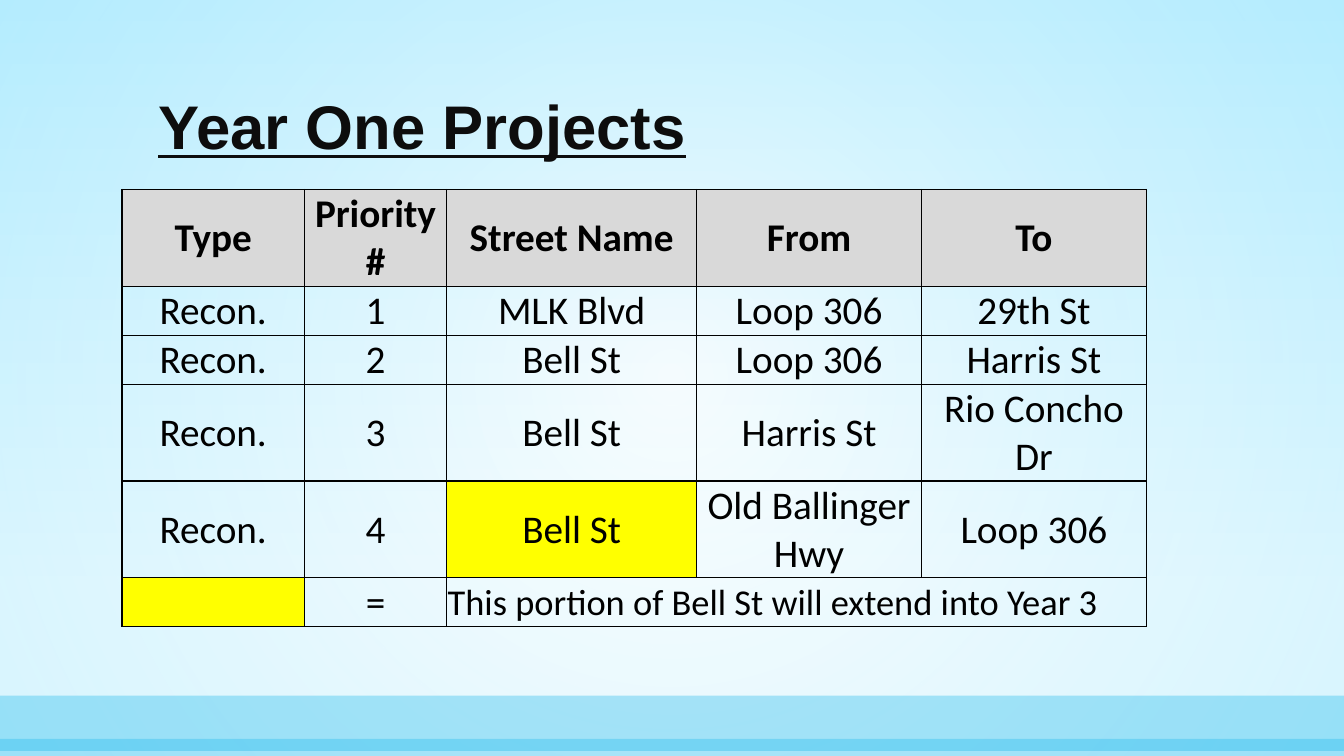
"""Build the Year One Projects slide with its street reconstruction table."""
from lxml.etree import SubElement
from pptx import Presentation
from pptx.dml.color import RGBColor
from pptx.enum.shapes import MSO_SHAPE
from pptx.enum.text import MSO_ANCHOR, PP_ALIGN
from pptx.oxml import parse_xml
from pptx.oxml.ns import nsdecls, qn
from pptx.util import Inches, Pt

COLORS = {
    "white": "FFFFFF",
    "pale": "C8F1FF",
    "sky": "91E4FF",
    "band": "00B0EA",
    "title": "0D0D0D",
    "black": "000000",
    "header": "D9D9D9",
    "highlight": "FFFF00",
}


def set_gradient(element, stops, direction):
    """Replace the first solid fill under element by a gradient."""
    stop_xml = "".join(
        f'<a:gs pos="{position * 1000}"><a:srgbClr val="{COLORS[name]}">'
        f'<a:alpha val="{alpha * 1000}"/></a:srgbClr></a:gs>'
        for position, name, alpha in stops
    )
    solid = element.find(".//" + qn("a:solidFill"))
    solid.getparent().replace(solid, parse_xml(
        f'<a:gradFill {nsdecls("a")} rotWithShape="1">'
        f"<a:gsLst>{stop_xml}</a:gsLst>{direction}</a:gradFill>"
    ))


def add_backdrop(slide, top, height, alpha):
    """Add a full-width rectangle with a translucent fill."""
    shape = slide.shapes.add_shape(
        MSO_SHAPE.RECTANGLE, 0, Inches(top), Inches(13.33), Inches(height))
    shape.shadow.inherit = False
    shape.line.fill.background()
    shape.fill.solid()
    shape.fill.fore_color.rgb = RGBColor.from_string(COLORS["band"])
    color = shape._element.spPr.find(".//" + qn("a:srgbClr"))
    SubElement(color, qn("a:alpha"), val=str(alpha * 1000))
    return shape


presentation = Presentation()
presentation.slide_width = Inches(13.33)
presentation.slide_height = Inches(7.5)
slide = presentation.slides.add_slide(presentation.slide_layouts[5])

slide.background.fill.solid()
set_gradient(slide._element, [(0, "pale", 56), (79, "white", 100)],
             '<a:lin ang="5400000" scaled="0"/>')
glow = add_backdrop(slide, 0, 7.5, 100)
set_gradient(glow._element.spPr, [(0, "white", 49), (100, "sky", 35)],
             '<a:path path="circle"><a:fillToRect l="50000" t="50000" '
             'r="50000" b="50000"/></a:path>')
add_backdrop(slide, 6.9, 0.55, 30)
add_backdrop(slide, 7.33, 0.17, 28)

title = slide.shapes.title
slide.shapes._spTree.append(title._element)
title.left, title.top = Inches(1.47), Inches(0.48)
title.width, title.height = Inches(10.4), Inches(1.19)
title.text_frame.text = "Year One Projects"
title.text_frame.vertical_anchor = MSO_ANCHOR.BOTTOM
paragraph = title.text_frame.paragraphs[0]
paragraph.alignment = PP_ALIGN.LEFT
paragraph.line_spacing = 0.9
paragraph.font.name = "Arial"
paragraph.font.size = Pt(44)
paragraph.font.bold = True
paragraph.font.underline = True
paragraph.font.color.rgb = RGBColor.from_string(COLORS["title"])

rows = [
    ["Type", "Priority #", "Street Name", "From", "To"],
    ["Recon.", "1", "MLK Blvd", "Loop 306", "29th St"],
    ["Recon.", "2", "Bell St", "Loop 306", "Harris St"],
    ["Recon.", "3", "Bell St", "Harris St", "Rio Concho Dr"],
    ["Recon.", "4", "Bell St", "Old Ballinger Hwy", "Loop 306"],
    ["", "=", "This portion of Bell St will extend into Year 3", "", ""],
]
column_widths = [1.81, 1.41, 2.48, 2.23, 2.23]
row_heights = [0.96, 0.48, 0.48, 0.96, 0.96, 0.48]
highlighted = {(4, 2), (5, 0)}
note = (5, 2)

table = slide.shapes.add_table(
    len(rows), len(column_widths), Inches(1.21), Inches(1.88),
    Inches(sum(column_widths)), Inches(sum(row_heights))).table
table.first_row = False
table.horz_banding = False
for column, width in zip(table.columns, column_widths):
    column.width = Inches(width)
for row, height in zip(table.rows, row_heights):
    row.height = Inches(height)
table.cell(*note).merge(table.cell(5, 4))

for row_index, row in enumerate(rows):
    for column_index, text in enumerate(row):
        position = (row_index, column_index)
        cell = table.cell(*position)
        cell.vertical_anchor = MSO_ANCHOR.MIDDLE
        cell.margin_left = cell.margin_right = cell.margin_top = Inches(0.01)
        cell.margin_bottom = 0
        if row_index == 0 or position in highlighted:
            fill_name = "highlight" if position in highlighted else "header"
            cell.fill.solid()
            cell.fill.fore_color.rgb = RGBColor.from_string(COLORS[fill_name])
        else:
            cell.fill.background()
        for index, side in enumerate(["lnL", "lnR", "lnT", "lnB"]):
            cell._tc.tcPr.insert(index, parse_xml(
                f'<a:{side} {nsdecls("a")} w="12700"><a:solidFill>'
                f'<a:srgbClr val="{COLORS["black"]}"/></a:solidFill></a:{side}>'
            ))
        if text:
            cell.text = text
        paragraph = cell.text_frame.paragraphs[0]
        paragraph.alignment = PP_ALIGN.LEFT if position == note else PP_ALIGN.CENTER
        paragraph.font.name = "Calibri"
        paragraph.font.size = Pt(26 if position == note else 28)
        paragraph.font.bold = row_index == 0
        paragraph.font.color.rgb = RGBColor.from_string(COLORS["black"])

presentation.save("out.pptx")
